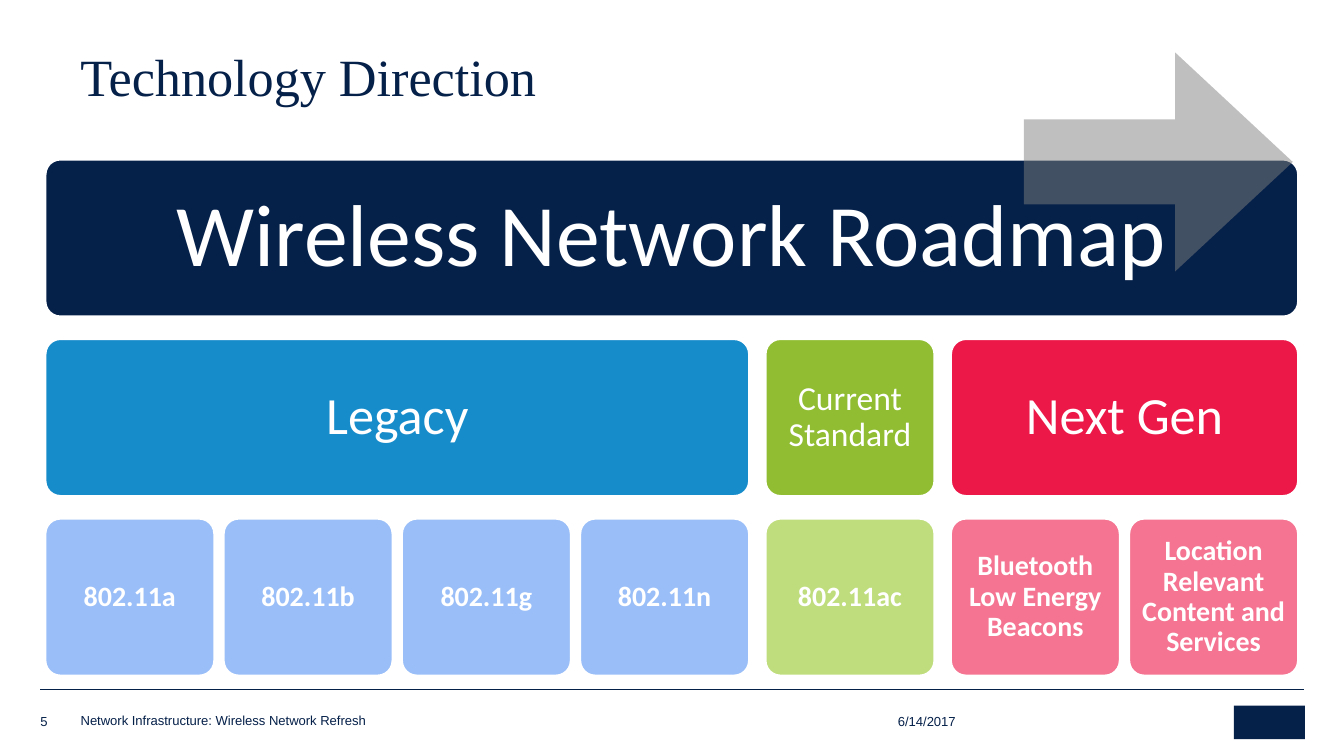
"""Build the Technology Direction slide with its wireless network roadmap."""
from dataclasses import dataclass

from lxml.etree import SubElement
from pptx import Presentation
from pptx.dml.color import RGBColor
from pptx.enum.shapes import MSO_CONNECTOR, MSO_SHAPE
from pptx.enum.text import MSO_ANCHOR, PP_ALIGN
from pptx.oxml.ns import qn
from pptx.shapes.autoshape import Shape
from pptx.slide import Slide
from pptx.util import Pt


@dataclass(frozen=True)
class Theme:
    navy: str = "052049"
    white: str = "FFFFFF"
    gray: str = "808080"
    blue: str = "178CCB"
    pale_blue: str = "9ABFF8"
    green: str = "90BD31"
    pale_green: str = "BFDD7D"
    red: str = "EC1848"
    pale_red: str = "F47491"
    title_font: str = "Times New Roman"
    footer_font: str = "Arial"
    roadmap_font: str = "Calibri"
    title_size: float = 28
    banner_size: float = 47
    phase_size: float = 28
    narrow_phase_size: float = 18
    standard_size: float = 15
    footer_size: float = 7


@dataclass(frozen=True)
class Box:
    left: float
    top: float
    width: float
    height: float


@dataclass(frozen=True)
class Phase:
    name: str
    size: float
    inset: float
    color: str
    pale_color: str
    standards: tuple[str, ...]


@dataclass(frozen=True)
class Footer:
    text: str
    box: Box


THEME = Theme()
LEFT, TOP = 23.9, 85
CARD_WIDTH, CARD_HEIGHT = 91.4, 85
CARD_GAP, PHASE_GAP, ROW_PITCH = 4.1, 7.9, 96.2
PHASES = (
    Phase("Legacy", THEME.phase_size, 8.4, THEME.blue, THEME.pale_blue,
          ("802.11a", "802.11b", "802.11g", "802.11n")),
    Phase("Current Standard", THEME.narrow_phase_size, 5.4, THEME.green,
          THEME.pale_green, ("802.11ac",)),
    Phase("Next Gen", THEME.phase_size, 8.4, THEME.red, THEME.pale_red,
          ("Bluetooth Low Energy Beacons",
           "Location Relevant Content and Services")),
)
FOOTERS = (
    Footer("5", Box(21.6, 381, 19.4, 9.4)),
    Footer("Network Infrastructure: Wireless Network Refresh",
           Box(43.2, 382.3, 339, 8)),
    Footer("6/14/2017", Box(481, 381, 72.7, 9.4)),
)


def write(shape: Shape, text: str, *, font: str, size: float, color: str,
          bold: bool = False, align: PP_ALIGN = PP_ALIGN.LEFT,
          anchor: MSO_ANCHOR = MSO_ANCHOR.TOP, spacing: float = 1.0,
          insets: tuple[float, float] = (0, 0)) -> None:
    frame = shape.text_frame
    frame.word_wrap = True
    frame.vertical_anchor = anchor
    frame.margin_left = frame.margin_right = Pt(insets[0])
    frame.margin_top = frame.margin_bottom = Pt(insets[1])
    paragraph = frame.paragraphs[0]
    paragraph.alignment = align
    paragraph.line_spacing = spacing
    run = paragraph.add_run()
    run.text = text
    run.font.name = font
    run.font.size = Pt(size)
    run.font.bold = bold
    run.font.color.rgb = RGBColor.from_string(color)


def add_text_box(slide: Slide, box: Box) -> Shape:
    return slide.shapes.add_textbox(
        Pt(box.left), Pt(box.top), Pt(box.width), Pt(box.height))


def add_filled(slide: Slide, kind: MSO_SHAPE, box: Box, color: str) -> Shape:
    shape = slide.shapes.add_shape(
        kind, Pt(box.left), Pt(box.top), Pt(box.width), Pt(box.height))
    shape.shadow.inherit = False
    shape.fill.solid()
    shape.fill.fore_color.rgb = RGBColor.from_string(color)
    shape.line.fill.background()
    return shape


def add_card(slide: Slide, box: Box, text: str, color: str, size: float,
             inset: float, bold: bool = False) -> None:
    card = add_filled(slide, MSO_SHAPE.ROUNDED_RECTANGLE, box, color)
    card.adjustments[0] = 0.1
    card.line.color.rgb = RGBColor.from_string(THEME.white)
    card.line.width = Pt(2)
    write(card, text, font=THEME.roadmap_font, size=size, color=THEME.white,
          bold=bold, align=PP_ALIGN.CENTER, anchor=MSO_ANCHOR.MIDDLE,
          spacing=0.9, insets=(inset, inset))


def span(count: int) -> float:
    return count * CARD_WIDTH + (count - 1) * CARD_GAP


def add_roadmap(slide: Slide) -> None:
    total = (sum(span(len(phase.standards)) for phase in PHASES)
             + PHASE_GAP * (len(PHASES) - 1))
    add_card(slide, Box(LEFT, TOP, total, CARD_HEIGHT),
             "Wireless Network Roadmap", THEME.navy, THEME.banner_size, 14.4)
    left = LEFT
    for phase in PHASES:
        width = span(len(phase.standards))
        add_card(slide, Box(left, TOP + ROW_PITCH, width, CARD_HEIGHT),
                 phase.name, phase.color, phase.size, phase.inset)
        for column, standard in enumerate(phase.standards):
            card_left = left + column * (CARD_WIDTH + CARD_GAP)
            add_card(slide, Box(card_left, TOP + 2 * ROW_PITCH, CARD_WIDTH, CARD_HEIGHT),
                     standard, phase.pale_color, THEME.standard_size, 4.5, bold=True)
        left += width + PHASE_GAP


def add_direction_arrow(slide: Slide) -> None:
    arrow = add_filled(slide, MSO_SHAPE.RIGHT_ARROW,
                       Box(548.6, 28.1, 144, 117.4), THEME.gray)
    arrow.adjustments[0] = 0.388
    arrow.adjustments[1] = 0.537
    color = arrow.fill._xPr.find(qn("a:solidFill")).find(qn("a:srgbClr"))
    SubElement(color, qn("a:alpha")).set("val", "50000")


def add_footer(slide: Slide) -> None:
    rule = slide.shapes.add_connector(
        MSO_CONNECTOR.STRAIGHT, Pt(21.6), Pt(369.4), Pt(698.4), Pt(369.4))
    rule.line.color.rgb = RGBColor.from_string(THEME.navy)
    rule.line.width = Pt(0.25)
    SubElement(rule._element.spPr, qn("a:effectLst"))
    add_filled(slide, MSO_SHAPE.RECTANGLE, Box(661, 378, 38, 18), THEME.navy)
    for footer in FOOTERS:
        write(add_text_box(slide, footer.box), footer.text,
              font=THEME.footer_font, size=THEME.footer_size,
              color=THEME.navy, anchor=MSO_ANCHOR.BOTTOM)


def main() -> None:
    presentation = Presentation()
    presentation.slide_width, presentation.slide_height = Pt(720), Pt(405)
    slide = presentation.slides.add_slide(presentation.slide_layouts[6])
    add_footer(slide)
    write(add_text_box(slide, Box(36, 25.2, 637, 36.7)), "Technology Direction",
          font=THEME.title_font, size=THEME.title_size, color=THEME.navy,
          spacing=0.85, insets=(7.2, 3.6))
    add_roadmap(slide)
    add_direction_arrow(slide)
    presentation.save("out.pptx")


if __name__ == "__main__":
    main()
